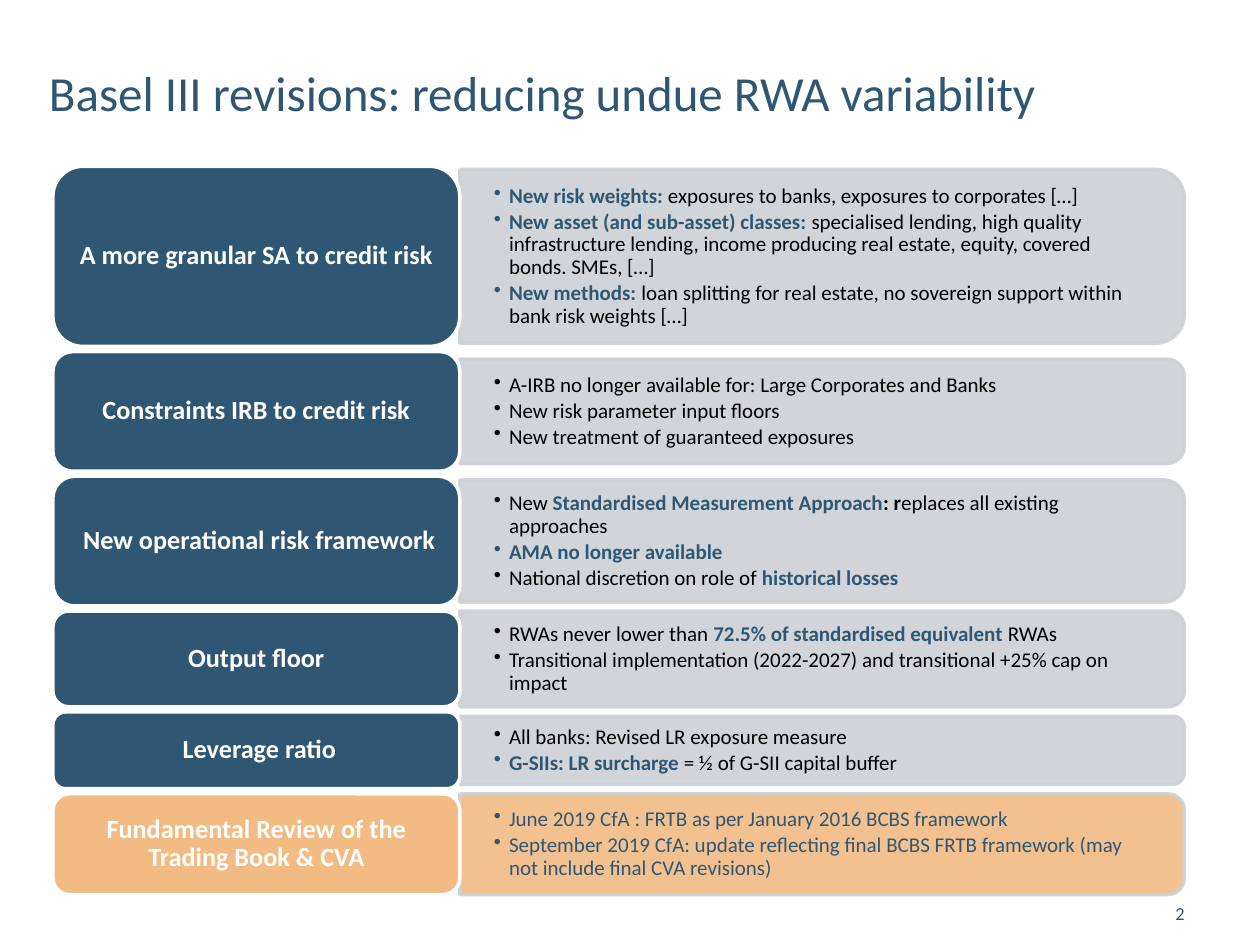
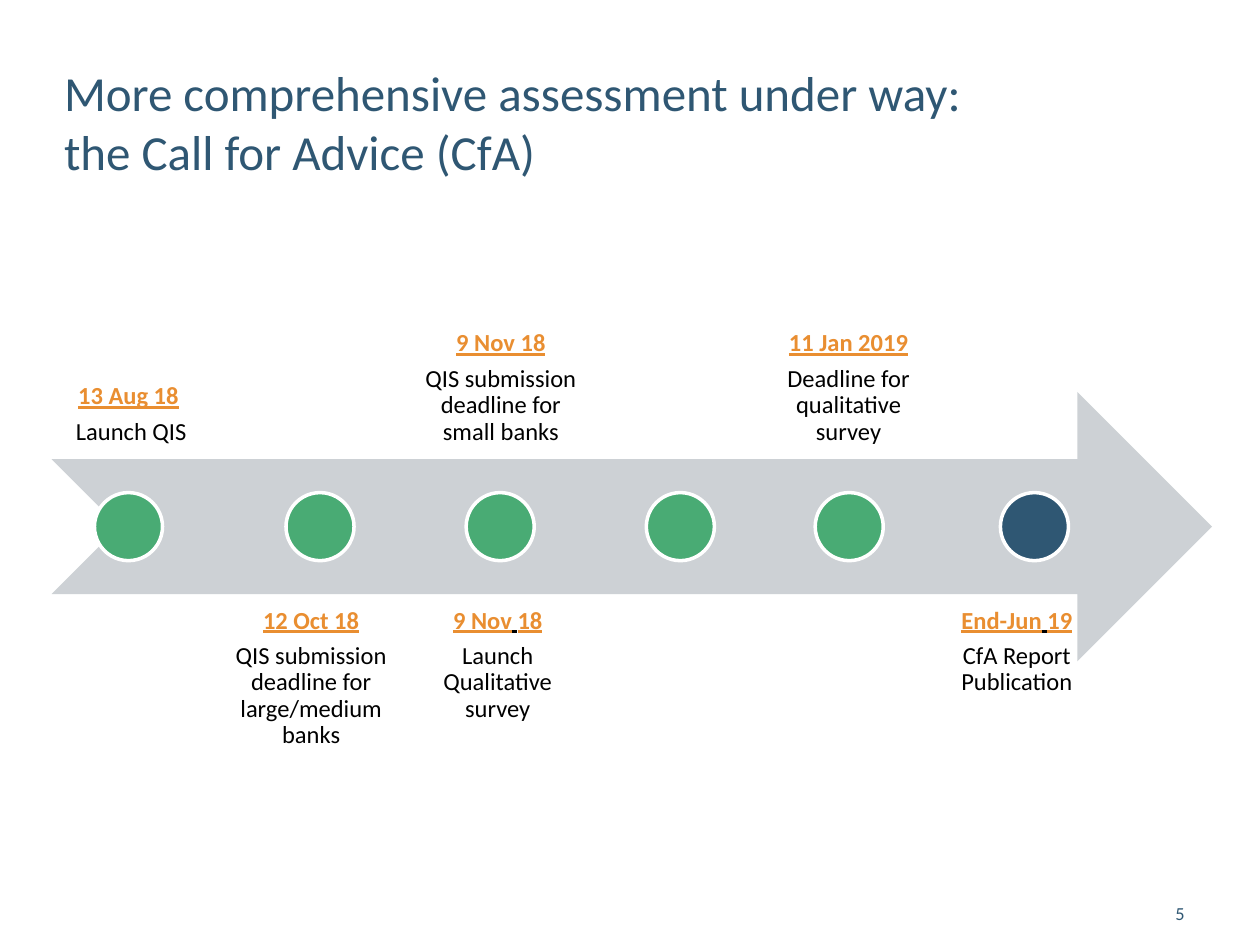
"""Build two slides on the Basel III revisions and the Call for Advice timeline."""
from lxml.etree import SubElement
from pptx import Presentation
from pptx.dml.color import RGBColor
from pptx.enum.shapes import MSO_SHAPE
from pptx.enum.text import MSO_ANCHOR, PP_ALIGN
from pptx.oxml.ns import qn
from pptx.util import Inches, Pt

FONT = "Calibri"
BLUE = RGBColor(0x2F, 0x57, 0x73)
GREY = RGBColor(0xCD, 0xD1, 0xD5)
SAND = RGBColor(0xF2, 0xBB, 0x83)
ORANGE = RGBColor(0xE9, 0x8E, 0x31)
GREEN = RGBColor(0x49, 0xAB, 0x74)
WHITE = RGBColor(0xFF, 0xFF, 0xFF)
BLACK = RGBColor(0, 0, 0)

# colour, bold, underline
PLAIN = (BLACK, False, False)
STRONG = (BLACK, True, False)
KEY = (BLUE, True, False)
SOFT = (BLUE, False, False)
LABEL = (WHITE, True, False)
DATE = (ORANGE, True, True)
DATE_SPACE = (BLACK, False, True)


def write(shape, paragraphs, size, align=PP_ALIGN.LEFT, anchor=MSO_ANCHOR.TOP,
          insets=(0.1, 0.05), spacing=1.0, after=0, bullet=False):
    text_frame = shape.text_frame
    text_frame.word_wrap = True
    text_frame.vertical_anchor = anchor
    text_frame.margin_left = text_frame.margin_right = Inches(insets[0])
    text_frame.margin_top = text_frame.margin_bottom = Inches(insets[1])
    for number, pieces in enumerate(paragraphs):
        paragraph = text_frame.add_paragraph() if number else text_frame.paragraphs[0]
        if bullet:
            properties = paragraph._p.get_or_add_pPr()
            properties.set("marL", str(Inches(0.12)))
            properties.set("indent", str(-Inches(0.12)))
            SubElement(properties, qn("a:buChar"), char="•")
        paragraph.alignment = align
        paragraph.line_spacing = spacing
        paragraph.space_after = Pt(after)
        for text, (colour, bold, underline) in pieces:
            for line_number, line in enumerate(text.split("\n")):
                if line_number:
                    paragraph.add_line_break()
                run = paragraph.add_run()
                run.text = line
                run.font.name = FONT
                run.font.size = Pt(size)
                run.font.color.rgb = colour
                run.font.bold = bold
                run.font.underline = underline


def add_block(slide, kind, box, fill, line=None, opacity=100):
    shape = slide.shapes.add_shape(kind, *map(Inches, box))
    shape.shadow.inherit = False
    shape.fill.solid()
    shape.fill.fore_color.rgb = fill
    if line is None:
        shape.line.fill.background()
    else:
        shape.line.color.rgb = line
        shape.line.width = Pt(2)
    if opacity < 100:
        for colour in shape._element.spPr.iter(qn("a:srgbClr")):
            SubElement(colour, qn("a:alpha"), val=str(opacity * 1000))
    return shape


presentation = Presentation()
presentation.slide_width, presentation.slide_height = Inches(10), Inches(7.5)

slides = []
for title, title_left, page in [
    ("Basel III revisions: reducing undue RWA variability", 0.29, "2"),
    ("More comprehensive assessment under way: \nthe Call for Advice (CfA)", 0.41, "5"),
]:
    slide = presentation.slides.add_slide(presentation.slide_layouts[6])
    title_box = slide.shapes.add_textbox(Inches(title_left), Inches(0.45), Inches(8.05), Inches(0.61))
    write(title_box, [[(title, SOFT)]], 28)
    page_box = slide.shapes.add_textbox(Inches(8.65), Inches(7.11), Inches(0.85), Inches(0.24))
    write(page_box, [[(page, SOFT)]], 10.5, PP_ALIGN.RIGHT)
    slides.append(slide)
revisions_slide, timeline_slide = slides

LABEL_LEFT, LABEL_WIDTH = 0.42, 3.23
DETAIL_LEFT, DETAIL_WIDTH = LABEL_LEFT + LABEL_WIDTH, 5.75
ROW_GAP = 0.04

# label, label height, detail height, label fill, detail fill, details
revisions = [
    ("A more granular SA to credit risk", 1.43, 1.38, BLUE, GREY, [
        [("New risk weights: ", KEY), ("exposures to banks, exposures to corporates […]", PLAIN)],
        [("New asset (and sub-asset) classes: ", KEY),
         ("specialised lending, high quality infrastructure lending, income producing "
          "real estate, equity, covered bonds. SMEs, […]", PLAIN)],
        [("New methods: ", KEY),
         ("loan splitting for real estate, no sovereign support within bank risk weights […]", PLAIN)],
    ]),
    ("Constraints IRB to credit risk", 0.95, 0.83, BLUE, GREY, [
        [("A-IRB no longer available for: Large Corporates and Banks", PLAIN)],
        [("New risk parameter input floors", PLAIN)],
        [("New treatment of guaranteed exposures", PLAIN)],
    ]),
    (" New operational risk framework", 1.03, 0.97, BLUE, GREY, [
        [("New ", PLAIN), ("Standardised Measurement Approach", KEY), (": r", STRONG),
         ("eplaces all existing approaches", PLAIN)],
        [("AMA no longer available", KEY)],
        [("National discretion on role of ", PLAIN), ("historical losses", KEY)],
    ]),
    ("Output floor", 0.76, 0.76, BLUE, GREY, [
        [("RWAs never lower than ", PLAIN), ("72.5% of standardised equivalent ", KEY), ("RWAs", PLAIN)],
        [("Transitional implementation (2022-2027) and transitional +25% cap on impact", PLAIN)],
    ]),
    (" Leverage ratio", 0.61, 0.54, BLUE, GREY, [
        [("All banks: Revised LR exposure measure", PLAIN)],
        [("G-SIIs: LR surcharge ", KEY), ("= ½ of G-SII capital buffer", PLAIN)],
    ]),
    ("Fundamental Review of the Trading Book & CVA", 0.8, 0.8, SAND, SAND, [
        [("June 2019 CfA : FRTB as per January 2016 BCBS framework", SOFT)],
        [("September 2019 CfA: update reflecting final BCBS FRTB framework "
          "(may not include final CVA revisions)", SOFT)],
    ]),
]

row_top = 1.32
for label, label_height, detail_height, label_fill, detail_fill, details in revisions:
    middle = row_top + label_height / 2
    detail_box = (DETAIL_LEFT + (DETAIL_WIDTH - detail_height) / 2, middle - DETAIL_WIDTH / 2,
                  detail_height, DETAIL_WIDTH)
    panel = add_block(revisions_slide, MSO_SHAPE.ROUND_2_SAME_RECTANGLE, detail_box, detail_fill, GREY, 90)
    panel.rotation = 90
    detail_text = revisions_slide.shapes.add_textbox(
        Inches(DETAIL_LEFT), Inches(middle - detail_height / 2),
        Inches(DETAIL_WIDTH - 0.05 * detail_height), Inches(detail_height))
    write(detail_text, details, 12, anchor=MSO_ANCHOR.MIDDLE, insets=(0.27, 0.14),
          spacing=0.9, after=1.8, bullet=True)
    label_block = add_block(revisions_slide, MSO_SHAPE.ROUNDED_RECTANGLE,
                            (LABEL_LEFT, row_top, LABEL_WIDTH, label_height), label_fill, WHITE)
    write(label_block, [[(label, LABEL)]], 15, PP_ALIGN.CENTER, MSO_ANCHOR.MIDDLE, (0.06, 0.03), 0.9, 5)
    row_top += label_height + ROW_GAP

ARROW_TOP, ARROW_HEIGHT, MARKER = 3.11, 2.14, 0.54
ABOVE = (ARROW_TOP - 0.75 * ARROW_HEIGHT, MSO_ANCHOR.BOTTOM)
BELOW = (ARROW_TOP + 0.75 * ARROW_HEIGHT, MSO_ANCHOR.TOP)
add_block(timeline_slide, MSO_SHAPE.NOTCHED_RIGHT_ARROW, (0.41, ARROW_TOP, 9.21, ARROW_HEIGHT), GREY)

# marker left, marker fill, text left, text width, side, date pieces, event
milestones = [
    (0.75, GREEN, 0.41, 1.22, ABOVE, [("13 Aug 18", DATE)], " Launch QIS"),
    (2.27, GREEN, 1.74, 1.46, BELOW, [("12 Oct 18", DATE)],
     "QIS submission deadline for large/medium banks"),
    (3.7, GREEN, 3.22, 1.51, ABOVE, [("9 Nov 18", DATE)], "QIS submission deadline for small banks"),
    (5.13, GREEN, 3.34, 1.22, BELOW, [("9 Nov", DATE), (" ", DATE_SPACE), ("18", DATE)],
     "Launch Qualitative survey"),
    (6.47, GREEN, 6.07, 1.33, ABOVE, [("11 Jan 2019", DATE)], "Deadline for qualitative survey"),
    (7.94, BLUE, 7.46, 1.22, BELOW, [("End-Jun", DATE), (" ", DATE_SPACE), ("19", DATE)],
     "CfA Report Publication"),
]
for marker_left, marker_fill, text_left, text_width, (text_top, anchor), date, event in milestones:
    event_text = timeline_slide.shapes.add_textbox(
        Inches(text_left), Inches(text_top), Inches(text_width), Inches(ARROW_HEIGHT))
    write(event_text, [date, [(event, PLAIN)]], 14, PP_ALIGN.CENTER, anchor, (0.11, 0.11), 0.9, 5)
    add_block(timeline_slide, MSO_SHAPE.OVAL,
              (marker_left, ARROW_TOP + (ARROW_HEIGHT - MARKER) / 2, MARKER, MARKER), marker_fill, WHITE)

presentation.save("out.pptx")
